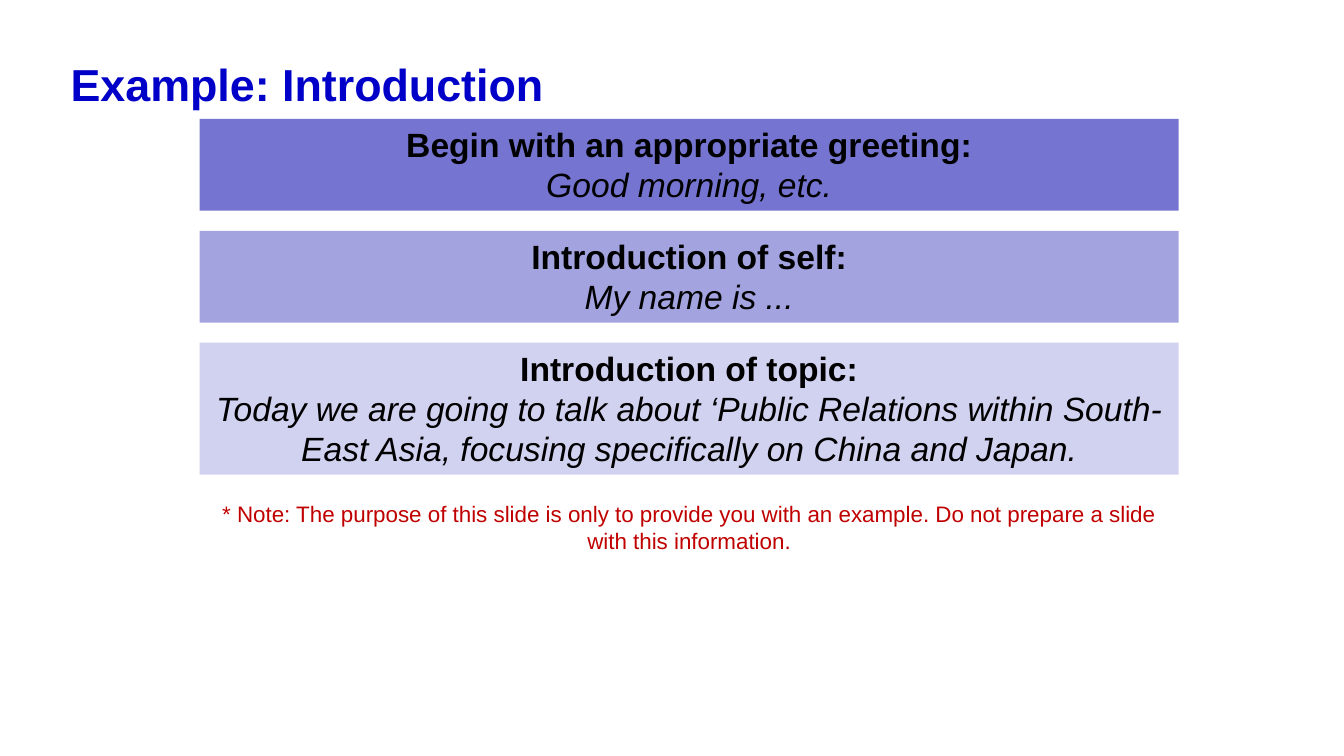
from pptx import Presentation
from pptx import util as u
from pptx.dml.color import RGBColor
from pptx.enum import shapes, text

PX_PER_INCH = 100
FONT = "Arial"
GAP = 20
STEPS = [
    ("Begin with an appropriate greeting:", "Good morning, etc.", "7575D1", 91),
    ("Introduction of self:", "My name is ...", "A3A3E0", 91),
    ("Introduction of topic:",
     "Today we are going to talk about ‘Public Relations within South-East Asia, "
     "focusing specifically on China and Japan.", "D1D1F0", 131),
]
NOTE = ("* Note: The purpose of this slide is only to provide you with an example. "
        "Do not prepare a slide with this information.")


def px(length):
    return u.Inches(length / PX_PER_INCH)


def colour(hex_code):
    return RGBColor.from_string(hex_code)


def format_paragraph(paragraph, size, hex_code, align, bold=False, italic=False):
    paragraph.alignment = align
    for run in paragraph.runs:
        run.font.name = FONT
        run.font.size = u.Pt(size)
        run.font.color.rgb = colour(hex_code)
        run.font.bold = bold
        run.font.italic = italic


def place_heading(slide, left, top, width, height):
    heading = slide.shapes.title
    heading.left, heading.top = px(left), px(top)
    heading.width, heading.height = px(width), px(height)
    frame = heading.text_frame
    frame.text = "Example: Introduction"
    frame.vertical_anchor = text.MSO_ANCHOR.MIDDLE
    format_paragraph(frame.paragraphs[0], 32, "0000C8", text.PP_ALIGN.LEFT, bold=True)


def place_step(slide, left, top, width, height, step, example, fill):
    band = slide.shapes.add_shape(shapes.MSO_SHAPE.RECTANGLE,
                                  px(left), px(top), px(width), px(height))
    band.shadow.inherit = False
    band.fill.solid()
    band.fill.fore_color.rgb = colour(fill)
    band.line.fill.background()
    frame = band.text_frame
    frame.word_wrap = True
    frame.vertical_anchor = text.MSO_ANCHOR.TOP
    frame.text = f"{step}\n{example}"
    step_line, example_line = frame.paragraphs
    format_paragraph(step_line, 24, "000000", text.PP_ALIGN.CENTER, bold=True)
    format_paragraph(example_line, 24, "000000", text.PP_ALIGN.CENTER, italic=True)


def place_note(slide, left, top, width, height):
    note = slide.shapes.add_textbox(px(left), px(top), px(width), px(height))
    frame = note.text_frame
    frame.word_wrap = True
    frame.text = NOTE
    format_paragraph(frame.paragraphs[0], 16, "C00000", text.PP_ALIGN.CENTER)


def place_introduction(slide, left, top, width):
    for step, example, fill, height in STEPS:
        place_step(slide, left, top, width, height, step, example, fill)
        top += height + GAP
    place_note(slide, left, top, width, 64)


def main():
    deck = Presentation()
    deck.slide_width, deck.slide_height = px(1333), px(750)
    slide = deck.slides.add_slide(deck.slide_layouts[5])
    place_heading(slide, 60, 47, 1204, 71)
    place_introduction(slide, 198, 118, 971)
    deck.save("out.pptx")


if __name__ == "__main__":
    main()
